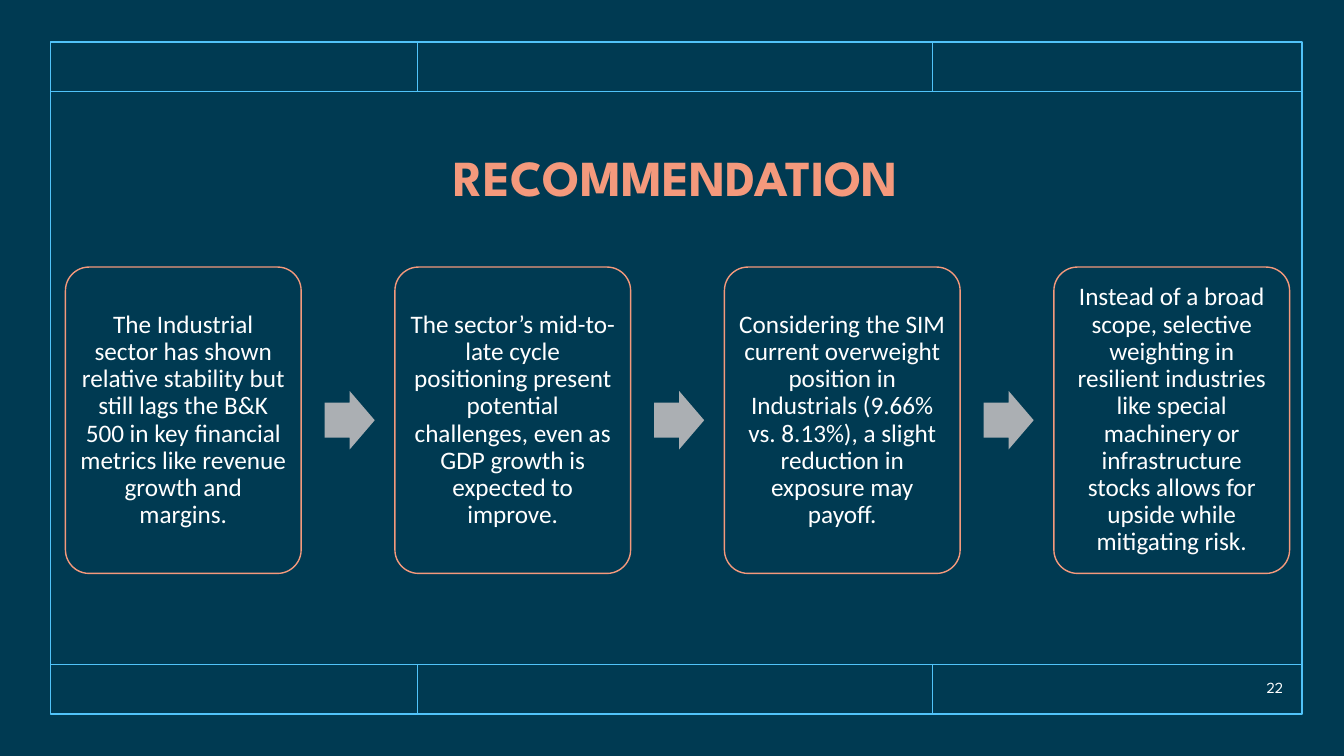
from lxml.etree import SubElement
from pptx import Presentation
from pptx.dml.color import RGBColor
from pptx.enum.shapes import MSO_CONNECTOR as Connector, MSO_SHAPE as Shape
from pptx.enum.text import MSO_ANCHOR as Anchor, PP_ALIGN as Align
from pptx.oxml.ns import qn
from pptx.util import Cm, Pt

NAVY, SKY, CORAL, GREY, WHITE = "003A52", "51C3F9", "F4997C", "ABAFB3", "FFFFFF"
HEADING_FONT, BODY_FONT = "League Spartan", "Calibri"
BAND = 1.25

STEPS = [
    "The\u00a0Industrial sector has shown relative stability but still lags the "
    "B&K 500 in key financial metrics like revenue growth and margins.",
    "The sector’s mid-to-late cycle positioning present potential challenges, "
    "even as GDP growth is expected to improve.",
    "Considering the SIM current overweight position in Industrials "
    "(9.66% vs. 8.13%), a slight reduction in exposure may payoff.",
    "Instead of a broad scope, selective weighting in resilient industries like "
    "special machinery or infrastructure stocks allows for upside while "
    "mitigating risk.",
]


def color(value):
    return RGBColor.from_string(value)


def add_box(slide, kind, box, fill=None, line=None):
    """Add a preset shape; box is left, top, width, height in cm."""
    shape = slide.shapes.add_shape(kind, *map(Cm, box))
    shape.shadow.inherit = False
    if fill:
        shape.fill.solid()
        shape.fill.fore_color.rgb = color(fill)
    else:
        shape.fill.background()
    if line:
        shape.line.color.rgb = color(line)
        shape.line.width = Pt(1)
    else:
        shape.line.fill.background()
    return shape


def add_rule(slide, x1, y1, x2, y2):
    rule = slide.shapes.add_connector(Connector.STRAIGHT, *map(Cm, (x1, y1, x2, y2)))
    rule.line.color.rgb = color(SKY)
    rule.line.width = Pt(1)
    SubElement(rule._element.spPr, qn("a:effectLst"))


def write(shape, text, size, font, ink=WHITE, align=Align.CENTER, bold=False):
    """Fill a shape with one vertically centred paragraph."""
    frame = shape.text_frame
    frame.word_wrap = True
    frame.vertical_anchor = Anchor.MIDDLE
    paragraph = frame.paragraphs[0]
    paragraph.alignment = align
    run = paragraph.add_run()
    run.text = text
    run.font.size = Pt(size)
    run.font.name = font
    run.font.bold = bold
    run.font.color.rgb = color(ink)
    return paragraph


def add_frame(slide, box):
    """Draw the outline with a three-part band along its top and bottom."""
    left, top, width, height = box
    right, bottom = left + width, top + height
    add_box(slide, Shape.RECTANGLE, box, line=SKY)
    for edge, inner in ((top, top + BAND), (bottom, bottom - BAND)):
        add_rule(slide, left, inner, right, inner)
        for offset in (9.25, 22.23):
            add_rule(slide, left + offset, inner, left + offset, edge)


def add_title(slide, box, text):
    title = slide.shapes.add_textbox(*map(Cm, box))
    write(title, text, 36, HEADING_FONT, CORAL, bold=True).line_spacing = 0.9


def add_page_number(slide, box, number):
    label = slide.shapes.add_textbox(*map(Cm, box))
    write(label, number, 11, HEADING_FONT, align=Align.RIGHT)


def add_process(slide, box, steps):
    """Spread equal cards over the box with an arrow in every gap."""
    left, top, width, height = box
    card_width, arrow_width, arrow_height = 5.94, 1.26, 1.47
    pitch = (width - card_width) / (len(steps) - 1)
    for index, text in enumerate(steps):
        x = left + index * pitch
        card = add_box(slide, Shape.ROUNDED_RECTANGLE,
                       (x, top, card_width, height), NAVY, CORAL)
        card.adjustments[0] = 0.1
        frame = card.text_frame
        frame.margin_left = frame.margin_right = Cm(0.18)
        frame.margin_top = frame.margin_bottom = Cm(0.18)
        write(card, text, 18, BODY_FONT).line_spacing = 0.9
        if index < len(steps) - 1:
            arrow = add_box(slide, Shape.RIGHT_ARROW,
                            (x + card_width * 1.1, top + (height - arrow_height) / 2,
                             arrow_width, arrow_height), GREY)
            arrow.adjustments[0] = 0.6
            arrow.adjustments[1] = 0.5


def main():
    presentation = Presentation()
    presentation.slide_width, presentation.slide_height = Cm(33.87), Cm(19.05)
    slide = presentation.slides.add_slide(presentation.slide_layouts[6])
    slide.background.fill.solid()
    slide.background.fill.fore_color.rgb = color(NAVY)

    left, top, width, height = 1.27, 1.06, 31.54, 16.93
    add_frame(slide, (left, top, width, height))
    add_title(slide, (left, top + BAND, width, 4.47), "RECOMMENDATION")
    add_page_number(slide, (30.25, 16.95, 2.34, 0.76), "22")
    add_process(slide, (1.65, 6.73, 30.85, 7.72), STEPS)
    presentation.save("out.pptx")


if __name__ == "__main__":
    main()
